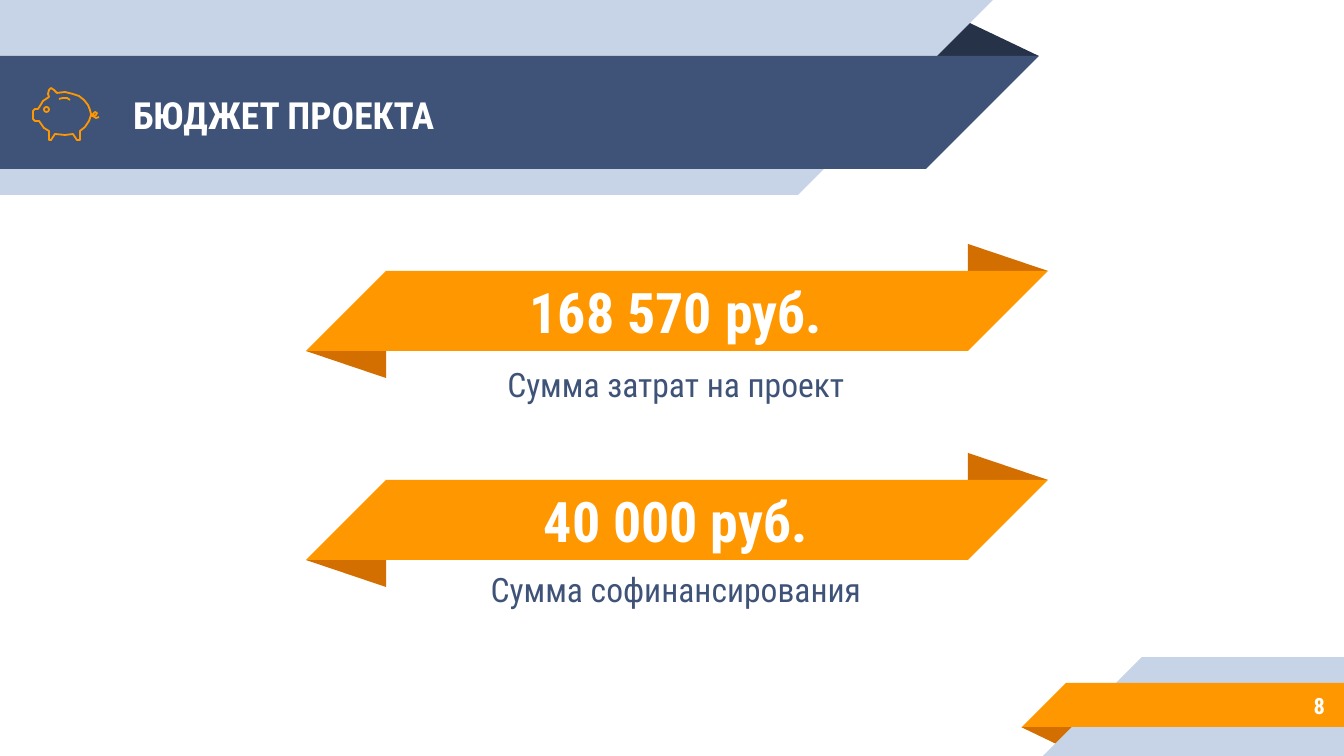
from dataclasses import dataclass

from pptx import Presentation
from pptx.dml.color import RGBColor
from pptx.enum.shapes import MSO_SHAPE as Preset
from pptx.enum.text import MSO_ANCHOR as Anchor, MSO_AUTO_SIZE as AutoSize, PP_ALIGN as Align
from pptx.util import Emu, Pt

EMU_PER_PX = 914400 / 134.4
INSET = 13


def px(value):
    return Emu(round(value * EMU_PER_PX))


@dataclass(frozen=True)
class Theme:
    font: str = "Roboto Condensed"
    white: str = "FFFFFF"
    navy: str = "3F5378"
    dark: str = "263248"
    pale: str = "C7D3E6"
    orange: str = "FF9800"
    rust: str = "D26F00"
    title: int = 20
    amount: int = 30
    caption: int = 18
    number: int = 12
    outline: float = 0.96


class SlideBuilder:
    def __init__(self, page, theme):
        self.page = page
        self.theme = theme

    def shape(self, preset, bounds, color, flip=None, turn=0, peak=None):
        shape = self.page.shapes.add_shape(preset, *map(px, bounds))
        shape.shadow.inherit = False
        shape.fill.solid()
        shape.fill.fore_color.rgb = RGBColor.from_string(color)
        shape.line.fill.background()
        shape.rotation = turn
        if flip:
            shape._element.spPr.xfrm.set(flip, "1")
        if peak is not None:
            shape.adjustments[0] = peak

    def outline(self, shape):
        shape.shadow.inherit = False
        shape.fill.background()
        shape.line.color.rgb = RGBColor.from_string(self.theme.orange)
        shape.line.width = Pt(self.theme.outline)

    def stroke(self, points):
        outline = self.page.shapes.build_freeform(*points[0], scale=EMU_PER_PX)
        outline.add_line_segments(points[1:], close=False)
        self.outline(outline.convert_to_shape())

    def ring(self, bounds):
        self.outline(self.page.shapes.add_shape(Preset.OVAL, *map(px, bounds)))

    def fill_text(self, box, text, size, color, bold=True, align=Align.LEFT, before=0, after=0):
        frame = box.text_frame
        frame_format = {"word_wrap": True, "auto_size": AutoSize.NONE,
                        "vertical_anchor": Anchor.MIDDLE}
        for side in ("left", "top", "right", "bottom"):
            frame_format[f"margin_{side}"] = px(INSET)
        for name, value in frame_format.items():
            setattr(frame, name, value)
        para = frame.paragraphs[0]
        para_format = {"alignment": align, "space_before": Pt(before), "space_after": Pt(after)}
        for name, value in para_format.items():
            setattr(para, name, value)
        span = para.add_run()
        span.text = text
        span_format = {"name": self.theme.font, "size": Pt(size), "bold": bold}
        for name, value in span_format.items():
            setattr(span.font, name, value)
        span.font.color.rgb = RGBColor.from_string(color)

    def title(self, bounds, text):
        box = self.page.shapes.title
        for name, value in zip(("left", "top", "width", "height"), bounds):
            setattr(box, name, px(value))
        self.page.shapes._spTree.append(box._element)
        self.fill_text(box, text, self.theme.title, self.theme.white)

    def text(self, bounds, text, size, color, **style):
        box = self.page.shapes.add_textbox(*map(px, bounds))
        self.fill_text(box, text, size, color, **style)

    def header_band(self, top, width, height, color):
        self.shape(Preset.RECTANGLE, (0, top, width, height), color)
        self.shape(Preset.RIGHT_TRIANGLE, (width, top, height, height), color, flip="flipV")

    def footer_band(self, left, top, height, color):
        self.shape(Preset.RECTANGLE, (left, top, 1344 - left, height), color)
        self.shape(Preset.RIGHT_TRIANGLE, (left - height, top, height, height), color, flip="flipH")

    def ribbon(self, top, amount, caption, caption_height):
        theme = self.theme
        left, right, side, fold = 386, 968, 80, 27
        self.shape(Preset.ISOSCELES_TRIANGLE, (right, top - fold, side, fold), theme.rust, peak=0)
        self.shape(Preset.RECTANGLE, (left, top, right - left, side), theme.orange)
        self.shape(Preset.RIGHT_TRIANGLE, (right, top, side, side), theme.orange, flip="flipV")
        self.shape(Preset.RIGHT_TRIANGLE, (left - side, top, side, side), theme.orange, flip="flipH")
        self.shape(Preset.ISOSCELES_TRIANGLE, (left - side, top + side, side, fold),
                   theme.rust, turn=180, peak=0)
        self.text((388, top + 1, 576, 78), amount, theme.amount, theme.white, align=Align.CENTER)
        self.text((388, top + 79, 576, caption_height), caption, theme.caption, theme.navy,
                  bold=False, align=Align.CENTER, after=10)

    def piggy_bank(self):
        tail = [(99, 117), (96, 118), (93, 116), (93, 114), (95, 112), (97, 113),
                (96, 115), (94, 116), (92, 116), (91, 114)]
        back = [(90, 110), (88, 105), (84, 100), (79, 96), (73, 94), (65, 92), (57, 93)]
        head = [(54, 90), (51, 88), (49, 90), (48, 94), (49, 97), (43, 101), (40, 106),
                (38, 109), (35, 109), (33, 111), (33, 119), (35, 121), (39, 121)]
        belly = [(44, 128), (49, 131), (49, 140), (51, 140), (55, 134), (65, 135),
                 (73, 134), (77, 140), (80, 140), (80, 131), (85, 127), (89, 121), (91, 115)]
        self.stroke(tail + back + head + belly)
        self.ring((44, 107, 5, 5))
        self.stroke([(70, 100), (67, 98), (63, 98), (59, 99)])


def main():
    deck = Presentation()
    deck.slide_width, deck.slide_height = px(1344), px(756)
    theme = Theme()
    slide = SlideBuilder(deck.slides.add_slide(deck.slide_layouts[5]), theme)

    slide.shape(Preset.ISOSCELES_TRIANGLE, (925, 19, 114, 37), theme.dark, peak=0.32)
    slide.header_band(0, 798, 195, theme.pale)
    slide.header_band(56, 926, 113, theme.navy)
    slide.shape(Preset.ISOSCELES_TRIANGLE, (1021, 727, 58, 19), theme.rust, turn=180, peak=0.32)
    slide.footer_band(1142, 657, 99, theme.pale)
    slide.footer_band(1066, 683, 44, theme.orange)

    slide.title((120, 58, 773, 113), "БЮДЖЕТ ПРОЕКТА")
    slide.text((1120, 682, 218, 47), "8", theme.number, theme.white, align=Align.RIGHT)
    slide.piggy_bank()
    slide.ribbon(271, "168 570 руб.", "Сумма затрат на проект", 69)
    slide.ribbon(480, "40 000 руб.", "Сумма софинансирования", 61)
    deck.save("out.pptx")


if __name__ == "__main__":
    main()
